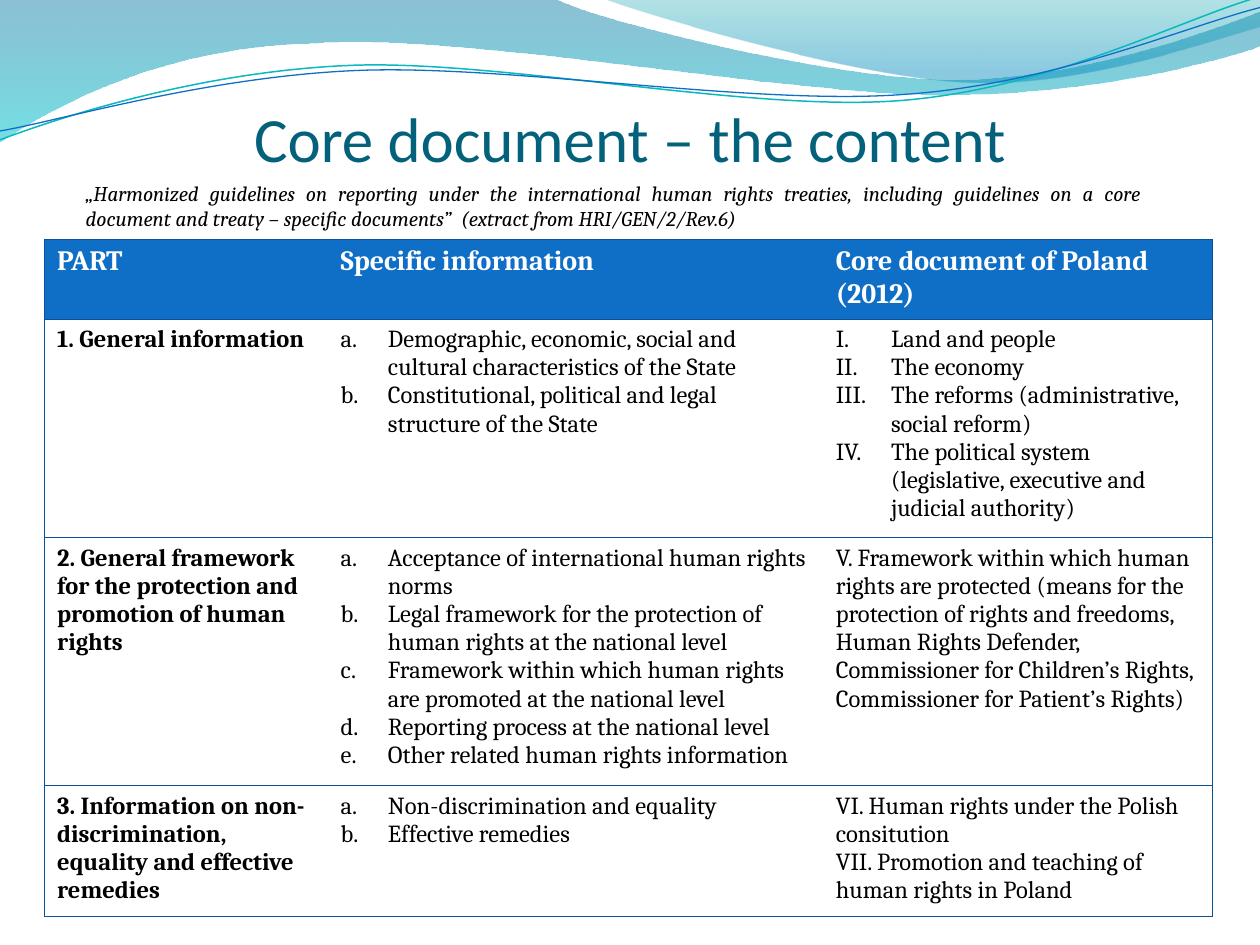
from dataclasses import dataclass
from typing import Optional

from lxml.etree import SubElement
from pptx import Presentation
from pptx.dml.color import RGBColor
from pptx.enum.text import MSO_ANCHOR, PP_ALIGN
from pptx.oxml.ns import qn
from pptx.util import Inches, Pt

UNIT = Inches(0.1)
COLUMNS, ROWS = 100, 75
BLACK = RGBColor(0x00, 0x00, 0x00)
WHITE = RGBColor(0xFF, 0xFF, 0xFF)
TITLE_TEAL = RGBColor(0x04, 0x61, 0x7B)
HEADER_BLUE = RGBColor(0x0F, 0x6F, 0xC6)
BORDER_BLUE = RGBColor(0x09, 0x52, 0x95)
LINE_TEAL = RGBColor(0x0A, 0xB8, 0xBF)
DEEP_BLUE = RGBColor(0x00, 0x74, 0xA1)
AQUA = RGBColor(0x00, 0xC6, 0xCF)
SEA_GREEN = RGBColor(0x00, 0xA1, 0xA9)
SKY_BLUE = RGBColor(0x00, 0x8B, 0xBF)


@dataclass(frozen=True)
class Style:
    font: str
    size: int
    color: RGBColor
    bold: bool = False
    italic: bool = False
    align: PP_ALIGN = PP_ALIGN.LEFT


@dataclass(frozen=True)
class Numbering:
    scheme: str
    indent: float


@dataclass(frozen=True)
class Entry:
    lines: tuple
    numbering: Optional[Numbering] = None


@dataclass(frozen=True)
class Stop:
    position: float
    color: RGBColor
    opacity: int


@dataclass(frozen=True)
class Wave:
    start: tuple
    segments: tuple
    stops: tuple = ()
    line: Optional[RGBColor] = None
    width: float = 0


TITLE = Style("Calibri", 36, TITLE_TEAL, align=PP_ALIGN.CENTER)
SUBTITLE = Style("Cambria", 12, BLACK, italic=True, align=PP_ALIGN.JUSTIFY)
HEADER = Style("Cambria", 16, WHITE, bold=True)
PART = Style("Cambria", 14, BLACK, bold=True)
BODY = Style("Cambria", 14, BLACK)
LETTERS = Numbering("alphaLcPeriod", 3.75)
ROMANS = Numbering("romanUcPeriod", 4.38)

WAVES = (
    Wave((0, 0), (
        (44, -0.1), (47.6, 1.7, 66.4, 6.3, 75.8, 6.3), (85.3, 6.3, 95.8, 2.6, 100, 0.9),
        (100.1, 3.6), (98.3, 4.4, 87, 7.6, 74.6, 7.5), (62.2, 7.5, 38.2, 2.8, 25.7, 3.4),
        (12.9, 3.6, 4.6, 8.3, -0.1, 11.3)),
        (Stop(0, DEEP_BLUE, 45), Stop(1, AQUA, 55))),
    Wave((47.9, -0.1), (
        (50.9, 1.1, 68.2, 6.2, 76.9, 6.5), (85.6, 6.9, 96.1, 3.2, 100, 2.1), (100, 0)),
        (Stop(0, SEA_GREEN, 30), Stop(0.8, SKY_BLUE, 45))),
    Wave((0, 11.1), (
        (4.8, 9.3, 15.8, 5.7, 27.7, 5.2), (39.5, 4.7, 59.3, 8.9, 71.3, 8),
        (83.3, 7.1, 93.8, 1.5, 99.8, -0.2)), line=LINE_TEAL, width=0.85),
    Wave((0, 10.4), (
        (4.7, 9.6, 16.4, 6.1, 28.3, 5.6), (40.3, 5.1, 59.7, 8.4, 71.7, 7.5),
        (83.6, 6.7, 94.1, 2.1, 100, 0.6)), line=HEADER_BLUE, width=0.75),
)

COLUMN_WIDTHS = (22.5, 39.3, 30.9)
ROW_HEIGHT = 4.1
TABLE_HEIGHT = 56
TABLE_ROWS = (
    (Entry(("PART",)), Entry(("Specific information",)),
     Entry(("Core document of Poland (2012)",))),
    (Entry(("1. General information",)),
     Entry(("Demographic, economic, social and cultural characteristics of the State",
            "Constitutional, political and legal structure of the State"), LETTERS),
     Entry(("Land and people", "The economy",
            "The reforms (administrative, social reform)",
            "The political system (legislative, executive and judicial authority)"), ROMANS)),
    (Entry(("2. General framework for the protection and promotion of human rights",)),
     Entry(("Acceptance of international human rights norms",
            "Legal framework for the protection of human rights at the national level",
            "Framework within which human rights are promoted at the national level",
            "Reporting process at the national level",
            "Other related human rights information"), LETTERS),
     Entry(("V. Framework within which human rights are protected (means for the "
            "protection of rights and freedoms, Human Rights Defender, Commissioner for "
            "Children’s Rights, Commissioner for Patient’s Rights)",))),
    (Entry(("3. Information on non-discrimination, equality and effective remedies",)),
     Entry(("Non-discrimination and equality", "Effective remedies"), LETTERS),
     Entry(("VI. Human rights under the Polish consitution",
            "VII. Promotion and teaching of human rights in Poland"))),
)


def grid(*lengths: float) -> list:
    """Turn grid units into slide lengths."""
    return [round(length * UNIT) for length in lengths]


def bend(shape, segments: tuple) -> None:
    """Join each three straight steps of a cubic segment into one curve."""
    steps = iter(list(shape._element.iter(qn("a:lnTo"))))
    for segment in segments:
        first = next(steps)
        if len(segment) == 6:
            first.tag = qn("a:cubicBezTo")
            for _ in range(2):
                step = next(steps)
                first.append(step[0])
                step.getparent().remove(step)


def draw_wave(page, wave: Wave) -> None:
    """Draw a filled swoosh or a thin curved line."""
    builder = page.shapes.build_freeform(*grid(*wave.start))
    points = [grid(*segment[index:index + 2])
              for segment in wave.segments for index in range(0, len(segment), 2)]
    builder.add_line_segments(points, close=bool(wave.stops))
    shape = builder.convert_to_shape()
    bend(shape, wave.segments)
    shape.shadow.inherit = False
    if not wave.stops:
        shape.fill.background()
        shape.line.color.rgb = wave.line
        shape.line.width = Pt(wave.width)
        return
    shape.line.fill.background()
    shape.fill.gradient()
    shape.fill.gradient_angle = 270
    for target, stop in zip(shape.fill.gradient_stops, wave.stops):
        target.position = stop.position
        target.color.rgb = stop.color
    for color, stop in zip(shape._element.spPr.iter(qn("a:srgbClr")), wave.stops):
        SubElement(color, qn("a:alpha"), val=str(stop.opacity * 1000))


def write(frame, entry: Entry, style: Style) -> None:
    """Fill a text frame with styled, optionally numbered paragraphs."""
    frame.word_wrap = True
    for index, line in enumerate(entry.lines):
        para = frame.add_paragraph() if index else frame.paragraphs[0]
        para.text = line
        para.alignment = style.align
        font = para.font
        font.name, font.size, font.color.rgb = style.font, Pt(style.size), style.color
        font.bold, font.italic = style.bold, style.italic
        if entry.numbering:
            properties = para._p.get_or_add_pPr()
            indent, = grid(entry.numbering.indent)
            properties.set("marL", str(indent))
            properties.set("indent", str(-indent))
            number = SubElement(properties, qn("a:buAutoNum"), type=entry.numbering.scheme)
            properties.insert(0, number)


def add_text(page, place: tuple, text: str, style: Style):
    """Add a text box and return its frame."""
    frame = page.shapes.add_textbox(*grid(*place)).text_frame
    write(frame, Entry((text,)), style)
    return frame


def set_borders(cell, visible: dict) -> None:
    """Draw the chosen sides of a cell and clear the others."""
    properties = cell._tc.get_or_add_tcPr()
    for side, shown in visible.items():
        line = SubElement(properties, qn(f"a:ln{side}"), w=str(Pt(0.75)))
        fill = SubElement(line, qn("a:solidFill" if shown else "a:noFill"))
        if shown:
            SubElement(fill, qn("a:srgbClr"), val=str(BORDER_BLUE))


def add_content_table(page) -> None:
    """Add the table of parts, contents and Polish chapters."""
    place = grid(3.54, 19, sum(COLUMN_WIDTHS), TABLE_HEIGHT)
    holder = page.shapes.add_table(len(TABLE_ROWS), len(COLUMN_WIDTHS), *place)
    table = holder.table
    table.horz_banding = False
    for column, width in zip(table.columns, grid(*COLUMN_WIDTHS)):
        column.width = width
    for row in table.rows:
        row.height, = grid(ROW_HEIGHT)
    holder.height, = grid(TABLE_HEIGHT)
    for row, entries in enumerate(TABLE_ROWS):
        for column, entry in enumerate(entries):
            cell = table.cell(row, column)
            set_borders(cell, {"L": column == 0, "R": column == len(entries) - 1,
                               "T": True, "B": True})
            if row == 0:
                cell.fill.solid()
                cell.fill.fore_color.rgb = HEADER_BLUE
            else:
                cell.fill.background()
            write(cell.text_frame, entry, HEADER if row == 0 else BODY if column else PART)


def main() -> None:
    """Build and save the slide."""
    deck = Presentation()
    deck.slide_width, deck.slide_height = grid(COLUMNS, ROWS)
    page = deck.slides.add_slide(deck.slide_layouts[6])
    for wave in WAVES:
        draw_wave(page, wave)
    title = add_text(page, (5, 6, 90, 7.9), "Core document – the content", TITLE)
    title.vertical_anchor = MSO_ANCHOR.BOTTOM
    title.margin_left = title.margin_right = title.margin_bottom = 0
    add_content_table(page)
    add_text(page, (5.82, 13.86, 85.8, 5),
             "„Harmonized guidelines on reporting under the international human rights "
             "treaties, including guidelines on a core document and treaty – specific "
             "documents”  (extract from HRI/GEN/2/Rev.6)", SUBTITLE)
    deck.save("out.pptx")


if __name__ == "__main__":
    main()
